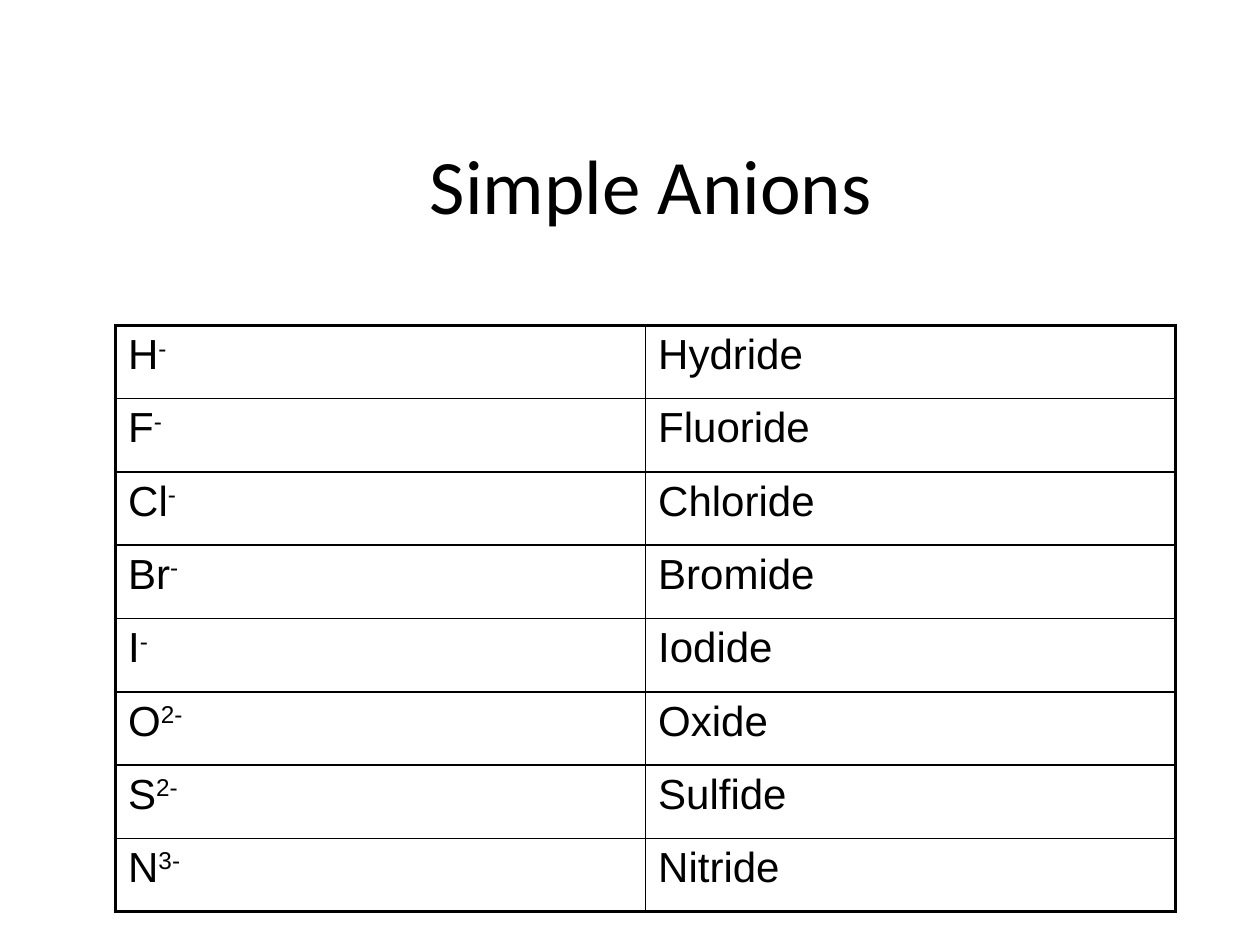
from pptx import Presentation
from pptx.dml.color import RGBColor
from pptx.enum.text import MSO_ANCHOR, PP_ALIGN
from pptx.oxml.ns import qn
from pptx.util import Cm, Pt
from lxml.etree import SubElement

BLACK = "000000"
THICK, THIN = 2.25, 1
ANIONS = [
    ("H", "-", "Hydride"),
    ("F", "-", "Fluoride"),
    ("Cl", "-", "Chloride"),
    ("Br", "-", "Bromide"),
    ("I", "-", "Iodide"),
    ("O", "2-", "Oxide"),
    ("S", "2-", "Sulfide"),
    ("N", "3-", "Nitride"),
]


def color(hex_value):
    return RGBColor.from_string(hex_value)


def format_run(run, font_name, size):
    run.font.name = font_name
    run.font.size = Pt(size)
    run.font.color.rgb = color(BLACK)


def add_title(slide, text, left, top, width, height):
    title = slide.shapes.title
    title.left, title.top, title.width, title.height = left, top, width, height
    text_frame = title.text_frame
    text_frame.text = text
    text_frame.vertical_anchor = MSO_ANCHOR.MIDDLE
    paragraph = text_frame.paragraphs[0]
    paragraph.alignment = PP_ALIGN.CENTER
    format_run(paragraph.runs[0], "Calibri", 44)


def set_borders(cell, widths):
    properties = cell._tc.get_or_add_tcPr()
    for side, width in widths.items():
        line = SubElement(properties, qn(f"a:ln{side}"), w=str(Pt(width)))
        fill = SubElement(line, qn("a:solidFill"))
        SubElement(fill, qn("a:srgbClr"), val=BLACK)


def fill_cell(cell, text, charge=""):
    paragraph = cell.text_frame.paragraphs[0]
    paragraph.text = text
    spacing = SubElement(paragraph._p.get_or_add_pPr(), qn("a:spcBef"))
    SubElement(spacing, qn("a:spcPct"), val="20000")
    if charge:
        superscript = paragraph.add_run()
        superscript.text = charge
        superscript._r.get_or_add_rPr().set("baseline", "30000")
    for run in paragraph.runs:
        format_run(run, "Arial", 24)


def add_anion_table(slide, anions, left, top, width, height):
    last = len(anions) - 1
    table = slide.shapes.add_table(len(anions), 2, left, top, width, height).table
    table.first_row = table.horz_banding = False
    for index, (symbol, charge, name) in enumerate(anions):
        symbol_cell, name_cell = table.rows[index].cells
        fill_cell(symbol_cell, symbol, charge)
        fill_cell(name_cell, name)
        for cell in (symbol_cell, name_cell):
            set_borders(cell, {
                "L": THICK if cell is symbol_cell else THIN,
                "R": THICK if cell is name_cell else THIN,
                "T": THICK if index == 0 else THIN,
                "B": THICK if index == last else THIN,
            })
            cell.fill.background()


def main():
    presentation = Presentation()
    presentation.slide_width, presentation.slide_height = Cm(25.4), Cm(19.05)
    slide = presentation.slides.add_slide(presentation.slide_layouts[5])
    add_title(slide, "Simple Anions", Cm(2.12), Cm(2.12), Cm(22.01), Cm(3.18))
    add_anion_table(slide, ANIONS, Cm(2.33), Cm(6.56), Cm(21.37), Cm(11.82))
    presentation.save("out.pptx")


if __name__ == "__main__":
    main()
